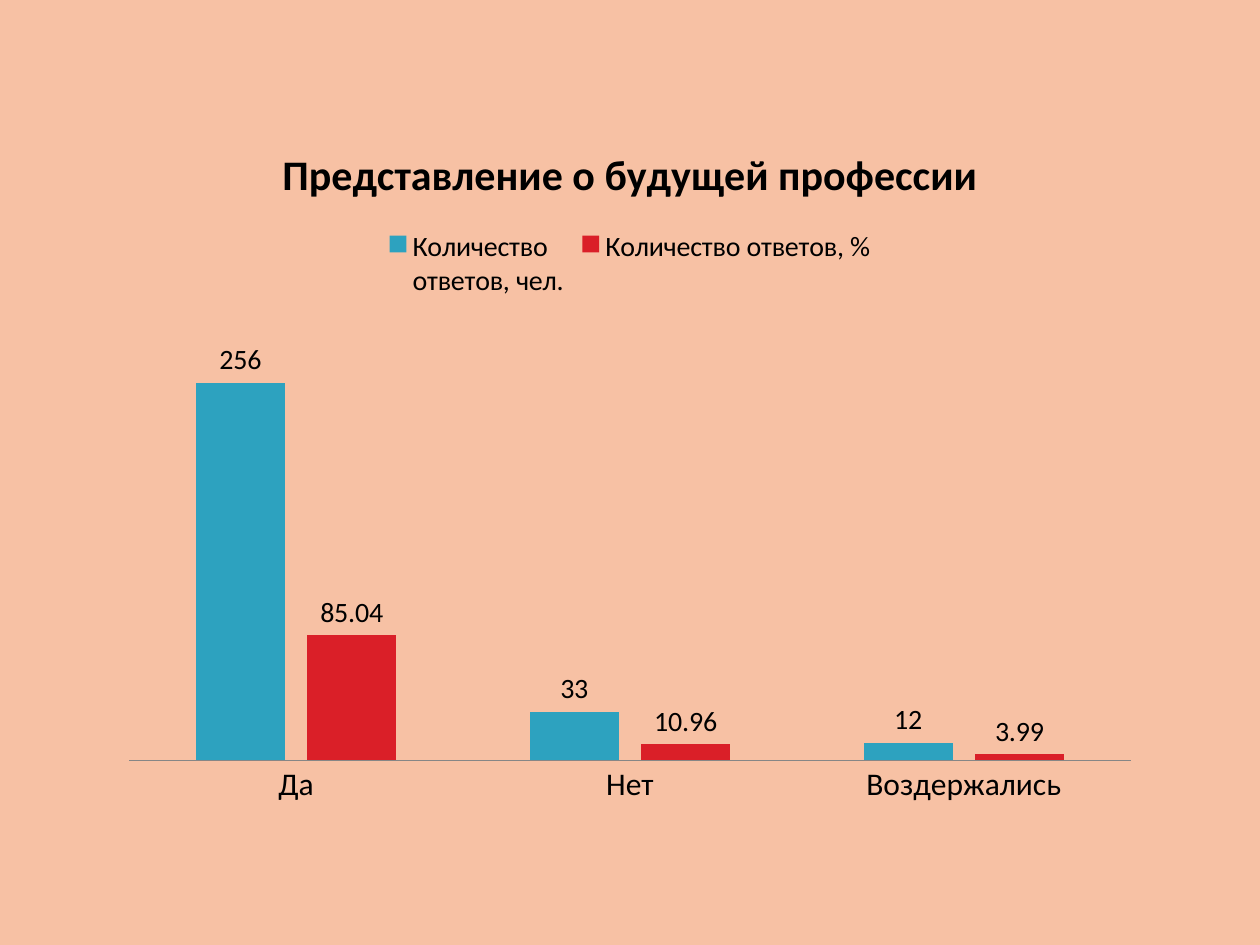
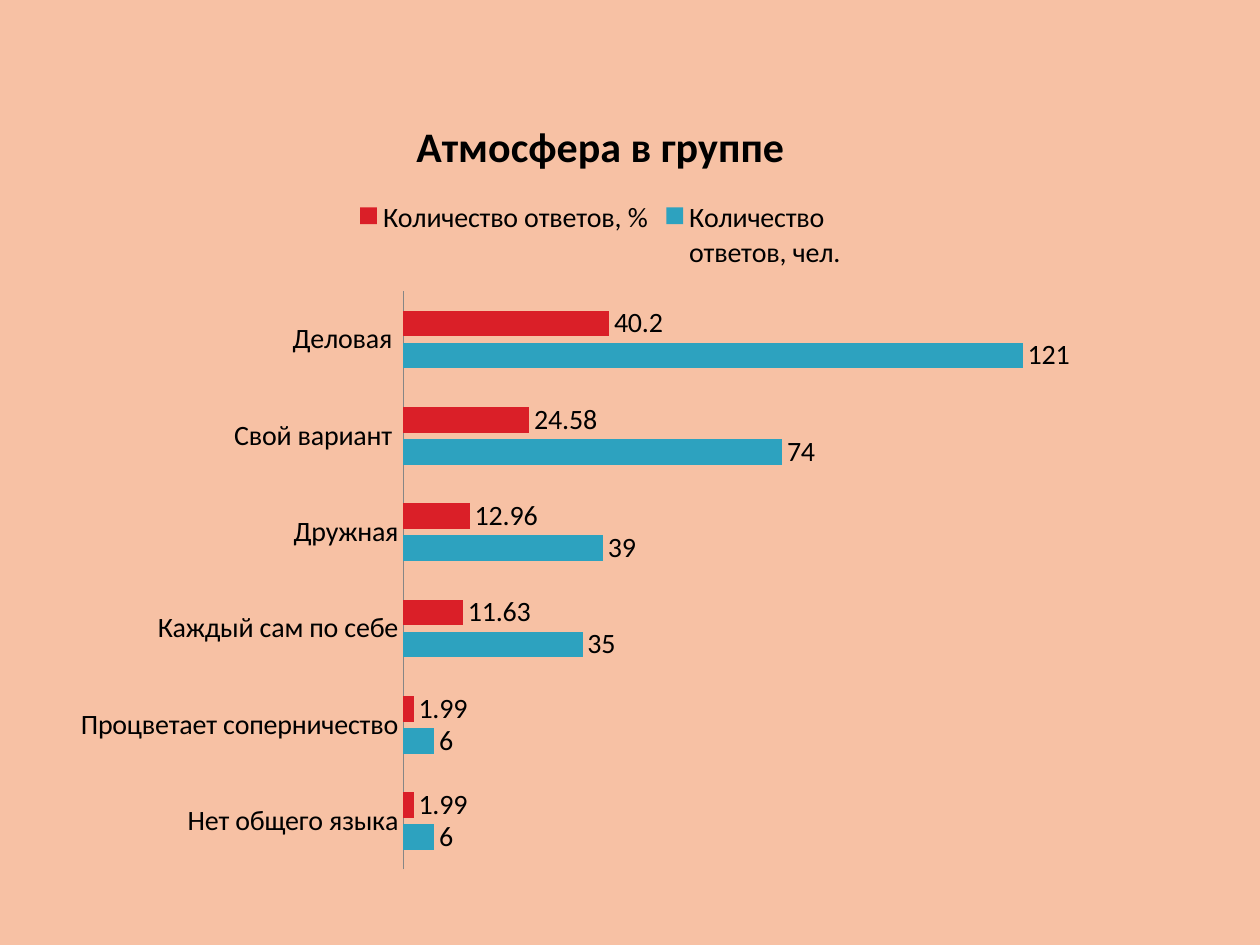
from dataclasses import dataclass

from pptx import Presentation
from pptx.chart.data import CategoryChartData as Data
from pptx.dml.color import RGBColor as Rgb
from pptx.enum.chart import XL_CHART_TYPE as Kind
from pptx.enum.chart import XL_LABEL_POSITION as Spot
from pptx.enum.chart import XL_LEGEND_POSITION as Side
from pptx.enum.chart import XL_TICK_MARK as Tick
from pptx.util import Inches, Pt

WIDE, HIGH = Inches(10), Inches(7.5)
FACE = "Calibri"
HUES = {
    "back": "F7C1A4",
    "text": "000000",
    "axis": "868686",
    "count": "2DA2BF",
    "share": "DA1F28",
}
NAMES = {
    "count": "Количество\nответов, чел.",
    "share": "Количество ответов, %",
}


@dataclass(frozen=True)
class Box:
    left: float
    top: float
    width: float
    height: float

    def place(self) -> tuple[int, int, int, int]:
        return (
            round(self.left * WIDE),
            round(self.top * HIGH),
            round(self.width * WIDE),
            round(self.height * HIGH),
        )


@dataclass(frozen=True)
class Poll:
    title: str
    kind: Kind
    box: Box
    size: int
    cats: tuple[str, ...]
    count: tuple[int, ...]
    share: tuple[float, ...]


POLLS = (
    Poll(
        title="Представление о будущей профессии",
        kind=Kind.COLUMN_CLUSTERED,
        box=Box(0.086, 0.125, 0.828, 0.74),
        size=18,
        cats=("Да", "Нет", "Воздержались"),
        count=(256, 33, 12),
        share=(85.04, 10.96, 3.99),
    ),
    Poll(
        title="Атмосфера в группе",
        kind=Kind.BAR_CLUSTERED,
        box=Box(0.047, 0.093, 0.859, 0.844),
        size=16,
        cats=(
            "Нет общего языка",
            "Процветает соперничество",
            "Каждый сам по себе",
            "Дружная",
            "Свой вариант ",
            "Деловая ",
        ),
        count=(6, 6, 35, 39, 74, 121),
        share=(1.99, 1.99, 11.63, 12.96, 24.58, 40.2),
    ),
)


def hue(name: str) -> Rgb:
    return Rgb.from_string(HUES[name])


def style(font, size: int = 16, bold: bool = False) -> None:
    font.name = FACE
    font.size = Pt(size)
    font.bold = bold
    font.color.rgb = hue("text")


def write(frame, text: str, **form) -> None:
    frame.text = text
    style(frame.paragraphs[0].runs[0].font, **form)


def set_axes(chart, size: int) -> None:
    chart.value_axis.visible = False
    chart.value_axis.has_major_gridlines = False
    chart.value_axis.minimum_scale = 0
    axis = chart.category_axis
    axis.major_tick_mark = axis.minor_tick_mark = Tick.NONE
    axis.has_major_gridlines = False
    axis.format.line.color.rgb = hue("axis")
    axis.format.line.width = Pt(0.75)
    style(axis.tick_labels.font, size=size)


def set_bars(chart) -> None:
    plot = chart.plots[0]
    plot.vary_by_categories = False
    plot.gap_width = 150
    plot.overlap = -25
    for key, bar in zip(NAMES, plot.series):
        bar.invert_if_negative = False
        bar.format.fill.solid()
        bar.format.fill.fore_color.rgb = hue(key)
        tags = bar.data_labels
        tags.show_value = True
        tags.position = Spot.OUTSIDE_END
        style(tags.font)


def draw(slide, poll: Poll) -> None:
    data = Data()
    data.categories = poll.cats
    for key, vals in zip(NAMES, (poll.count, poll.share)):
        data.add_series(NAMES[key], vals)
    chart = slide.shapes.add_chart(poll.kind, *poll.box.place(), data).chart
    style(chart.font)
    chart.has_title = True
    write(chart.chart_title.text_frame, poll.title, size=24, bold=True)
    chart.chart_title.include_in_layout = False
    chart.has_legend = True
    chart.legend.position = Side.TOP
    chart.legend.include_in_layout = False
    style(chart.legend.font)
    set_axes(chart, poll.size)
    set_bars(chart)


def main() -> None:
    deck = Presentation()
    deck.slide_width, deck.slide_height = WIDE, HIGH
    for poll in POLLS:
        slide = deck.slides.add_slide(deck.slide_layouts[6])
        slide.background.fill.solid()
        slide.background.fill.fore_color.rgb = hue("back")
        draw(slide, poll)
    deck.save("out.pptx")


if __name__ == "__main__":
    main()
